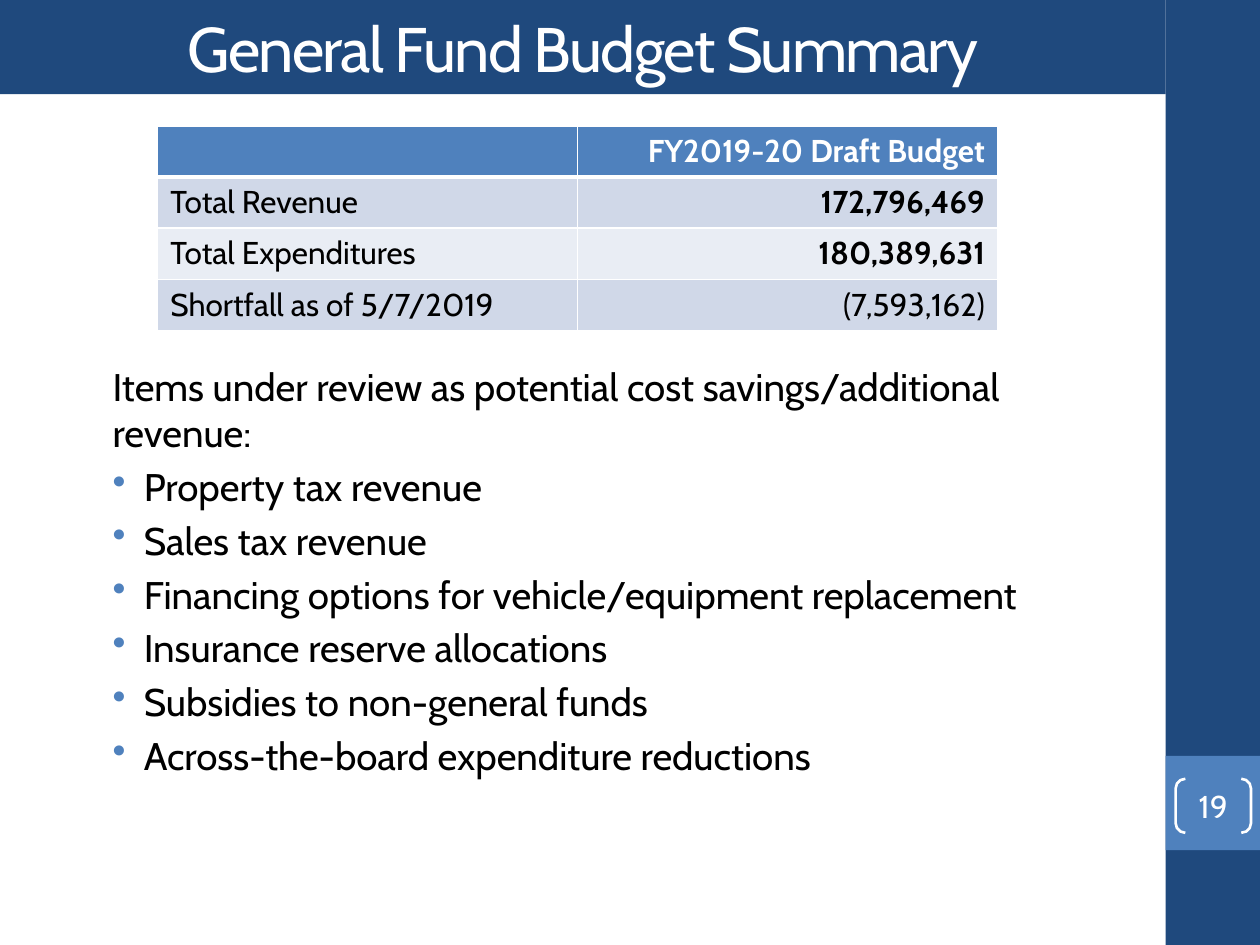
"""Build the General Fund budget summary slide."""
from lxml import etree
from pptx import Presentation
from pptx.dml.color import RGBColor
from pptx.enum.shapes import MSO_SHAPE
from pptx.enum.text import MSO_ANCHOR, PP_ALIGN
from pptx.oxml import parse_xml
from pptx.oxml.ns import nsdecls, qn
from pptx.util import Cm, Pt

RECTANGLE, BRACKETS = MSO_SHAPE.RECTANGLE, MSO_SHAPE.DOUBLE_BRACKET
MIDDLE = MSO_ANCHOR.MIDDLE
LEFT, CENTER, RIGHT = PP_ALIGN.LEFT, PP_ALIGN.CENTER, PP_ALIGN.RIGHT
NAVY, BLUE, WHITE, BLACK = "1F497D", "4F81BD", "FFFFFF", "000000"
BAND_DARK, BAND_LIGHT = "D0D8E8", "E9EDF4"


def rgb(value):
    return RGBColor.from_string(value)


def style(paragraph, size, color, align=LEFT, bold=False):
    paragraph.alignment = align
    font = paragraph.font
    font.name, font.size, font.bold = "Cabin", Pt(size), bold
    font.color.rgb = rgb(color)


prs = Presentation()
prs.slide_width, prs.slide_height = Cm(25.4), Cm(19.05)
slide = prs.slides.add_slide(prs.slide_layouts[6])

panels = []
for left, top, width, height, color in (
    (23.5, 0, 1.9, 19.05, NAVY),
    (23.5, 15.24, 1.9, 1.9, BLUE),
    (0, 0, 23.5, 1.9, NAVY),
):
    panel = slide.shapes.add_shape(RECTANGLE, Cm(left), Cm(top), Cm(width), Cm(height))
    panel.shadow.inherit = False
    panel.fill.solid()
    panel.fill.fore_color.rgb = rgb(color)
    panel.line.fill.background()
    panels.append(panel)

title = panels[-1].text_frame
title.vertical_anchor = MIDDLE
heading = title.paragraphs[0]
heading_run = heading.add_run()
heading_run.text = "General Fund Budget Summary"
heading_run.font._element.set("spc", "-100")
style(heading, 36, WHITE, CENTER)

review = slide.shapes.add_textbox(Cm(1.7), Cm(7.19), Cm(21.16), Cm(11.43)).text_frame
review.word_wrap = True
items = (
    "Items under review as potential cost savings/additional revenue:",
    "Property tax revenue",
    "Sales tax revenue",
    "Financing options for vehicle/equipment replacement",
    "Insurance reserve allocations",
    "Subsidies to non-general funds",
    "Across-the-board expenditure reductions",
)
for index, item in enumerate(items):
    paragraph = review.add_paragraph() if index else review.paragraphs[0]
    paragraph.text = item
    style(paragraph, 22, BLACK)
    paragraph.space_before = Pt(4.4)
    properties = paragraph._p.get_or_add_pPr()
    properties.set("marL", str(Cm(0.95 if index else 0.32)))
    properties.set("indent", str(Cm(-0.63 if index else 0)))
    if index:
        bullet_color = parse_xml(
            f'<a:buClr {nsdecls("a")}><a:srgbClr val="{BLUE}"/></a:buClr>')
        bullet = parse_xml(f'<a:buChar {nsdecls("a")} char="•"/>')
        default_run = properties.find(qn("a:defRPr"))
        default_run.addprevious(bullet_color)
        default_run.addprevious(bullet)

page = slide.shapes.add_shape(BRACKETS, Cm(23.7), Cm(15.7), Cm(1.52), Cm(1.09))
page.shadow.inherit = False
page.adjustments[0] = 0.18
page.fill.background()
page.line.color.rgb = rgb(WHITE)
page.line.width = Pt(1.5)
number = page.text_frame
number.margin_left = number.margin_right = number.margin_top = number.margin_bottom = 0
number.vertical_anchor = MIDDLE
number.paragraphs[0].text = "19"
style(number.paragraphs[0], 18, WHITE, CENTER)

budget = (
    ("", "FY2019-20 Draft Budget"),
    ("Total Revenue", "172,796,469"),
    ("Total Expenditures", "180,389,631"),
    ("Shortfall as of 5/7/2019", "(7,593,162)"),
)
last = len(budget) - 1
table = slide.shapes.add_table(
    len(budget), 2, Cm(3.18), Cm(2.54), Cm(16.93), Cm(4.12)).table
for r, values in enumerate(budget):
    for c, value in enumerate(values):
        cell = table.cell(r, c)
        cell.text = value
        bold = r == 0 or (c == 1 and r < last)
        style(cell.text_frame.paragraphs[0], 18, BLACK if r else WHITE,
              RIGHT if c else LEFT, bold)
        cell.fill.solid()
        cell.fill.fore_color.rgb = rgb((BAND_DARK if r % 2 else BAND_LIGHT) if r else BLUE)
        cell_properties = cell._tc.get_or_add_tcPr()
        for position, side in enumerate(("lnL", "lnR", "lnT", "lnB")):
            thick = (r, side) in ((0, "lnB"), (1, "lnT"))
            border = etree.Element(qn(f"a:{side}"), w=str(Pt(3 if thick else 1)))
            border_fill = etree.SubElement(border, qn("a:solidFill"))
            etree.SubElement(border_fill, qn("a:srgbClr"), val=WHITE)
            cell_properties.insert(position, border)

prs.save("out.pptx")
